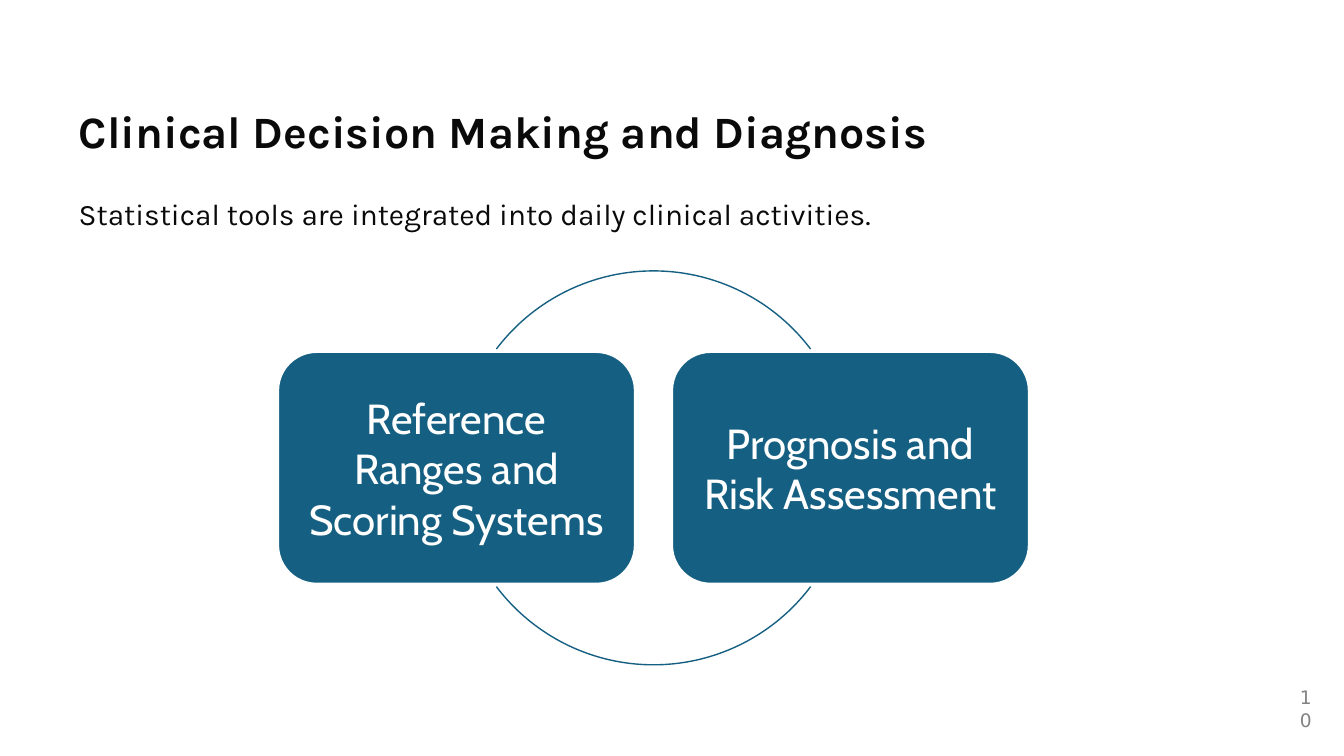
from dataclasses import dataclass

from lxml.etree import SubElement
from pptx import Presentation
from pptx.dml.color import RGBColor
from pptx.enum.shapes import MSO_SHAPE
from pptx.enum.text import MSO_ANCHOR, MSO_AUTO_SIZE, PP_ALIGN
from pptx.oxml.ns import qn
from pptx.slide import Slide
from pptx.text.text import TextFrame
from pptx.util import Pt


@dataclass(frozen=True)
class TextStyle:
    font: str
    size: float
    color: RGBColor
    bold: bool = False


@dataclass(frozen=True)
class Theme:
    accent: RGBColor
    outline: RGBColor
    title: TextStyle
    body: TextStyle
    card: TextStyle
    page_number: TextStyle


INK = RGBColor(0x0A, 0x0A, 0x0A)
WHITE = RGBColor(0xFF, 0xFF, 0xFF)
THEME = Theme(
    accent=RGBColor(0x15, 0x60, 0x82),
    outline=WHITE,
    title=TextStyle("Karla", 32, INK, bold=True),
    body=TextStyle("Karla", 21.3, INK),
    card=TextStyle("Cabin", 30, WHITE),
    page_number=TextStyle("DejaVu Sans", 13.3, RGBColor(0x82, 0x83, 0x83)),
)


@dataclass(frozen=True)
class Box:
    left: float
    top: float
    width: float
    height: float

    def lengths(self) -> tuple[Pt, Pt, Pt, Pt]:
        return Pt(self.left), Pt(self.top), Pt(self.width), Pt(self.height)


@dataclass(frozen=True)
class Card:
    label: str
    box: Box


@dataclass(frozen=True)
class Arc:
    """An arc of the cycle, running clockwise between two angles in degrees."""
    start: float
    end: float


CYCLE = Box(326.1, 193.5, 281.4, 281.4)
CARD_WIDTH, CARD_HEIGHT = 254.9, 165.6
CARD_TOP = CYCLE.top + (CYCLE.height - CARD_HEIGHT) / 2
# Each card is centred on one side of the cycle.
CARDS = [
    Card(label, Box(side - CARD_WIDTH / 2, CARD_TOP, CARD_WIDTH, CARD_HEIGHT))
    for label, side in (
        ("Reference Ranges and Scoring Systems", CYCLE.left),
        ("Prognosis and Risk Assessment", CYCLE.left + CYCLE.width),
    )
]
ARC_EDGE = 37.1
ARCS = [Arc(180 + ARC_EDGE, 360 - ARC_EDGE), Arc(ARC_EDGE, 180 - ARC_EDGE)]
# Preset angles count 60000ths of a degree; adjustments are scaled by 100000.
ADJUSTMENT_PER_DEGREE = 0.6


def write_text(frame: TextFrame, text: str, style: TextStyle, align: PP_ALIGN,
               anchor: MSO_ANCHOR, inset: tuple[float, float] = (0, 0),
               space_before: float = 0) -> None:
    """Fill a frame with one styled paragraph; inset is horizontal, vertical."""
    frame.text = text
    frame.word_wrap = True
    frame.auto_size = MSO_AUTO_SIZE.NONE
    frame.vertical_anchor = anchor
    frame.margin_left = frame.margin_right = Pt(inset[0])
    frame.margin_top = frame.margin_bottom = Pt(inset[1])
    paragraph = frame.paragraphs[0]
    paragraph.alignment = align
    paragraph.space_before = Pt(space_before)
    paragraph.font.name = style.font
    paragraph.font.size = Pt(style.size)
    paragraph.font.bold = style.bold
    paragraph.font.color.rgb = style.color


def add_headings(slide: Slide) -> None:
    title, statement = slide.shapes.title, slide.placeholders[1]
    title.left, title.top, title.width, title.height = Box(56.2, 57.6, 872, 72).lengths()
    write_text(title.text_frame, "Clinical Decision Making and Diagnosis",
               THEME.title, PP_ALIGN.LEFT, MSO_ANCHOR.MIDDLE, space_before=10)

    statement.left, statement.top, statement.width, statement.height = Box(
        56.2, 139.7, 840.2, 319.7).lengths()
    write_text(statement.text_frame,
               "Statistical tools are integrated into daily clinical activities.",
               THEME.body, PP_ALIGN.LEFT, MSO_ANCHOR.TOP)
    properties = statement.text_frame.paragraphs[0]._p.get_or_add_pPr()
    properties.set("marL", "0")
    properties.set("indent", "0")
    bullet = SubElement(properties, qn("a:buNone"))
    properties.find(qn("a:spcBef")).addnext(bullet)


def add_card(slide: Slide, card: Card) -> None:
    panel = slide.shapes.add_shape(MSO_SHAPE.ROUNDED_RECTANGLE, *card.box.lengths())
    panel.shadow.inherit = False
    panel.fill.solid()
    panel.fill.fore_color.rgb = THEME.accent
    panel.line.color.rgb = THEME.outline
    panel.line.width = Pt(1.5)
    write_text(panel.text_frame, card.label, THEME.card, PP_ALIGN.CENTER,
               MSO_ANCHOR.MIDDLE, inset=(8.6, 8.6))


def add_arc(slide: Slide, arc: Arc) -> None:
    curve = slide.shapes.add_shape(MSO_SHAPE.ARC, *CYCLE.lengths())
    curve.adjustments[0] = arc.start * ADJUSTMENT_PER_DEGREE
    curve.adjustments[1] = arc.end * ADJUSTMENT_PER_DEGREE
    curve.shadow.inherit = False
    curve.fill.background()
    curve.line.color.rgb = THEME.accent
    curve.line.width = Pt(1)


def add_page_number(slide: Slide) -> None:
    number = slide.shapes.add_textbox(*Box(920.2, 491.8, 23.8, 28.8).lengths())
    write_text(number.text_frame, "10", THEME.page_number, PP_ALIGN.RIGHT,
               MSO_ANCHOR.MIDDLE, inset=(7.2, 3.6))


def main() -> None:
    presentation = Presentation()
    presentation.slide_width, presentation.slide_height = Pt(960), Pt(540)
    slide = presentation.slides.add_slide(presentation.slide_layouts[1])
    add_headings(slide)
    for card, arc in zip(CARDS, ARCS):
        add_card(slide, card)
        add_arc(slide, arc)
    add_page_number(slide)
    presentation.save("out.pptx")


if __name__ == "__main__":
    main()
